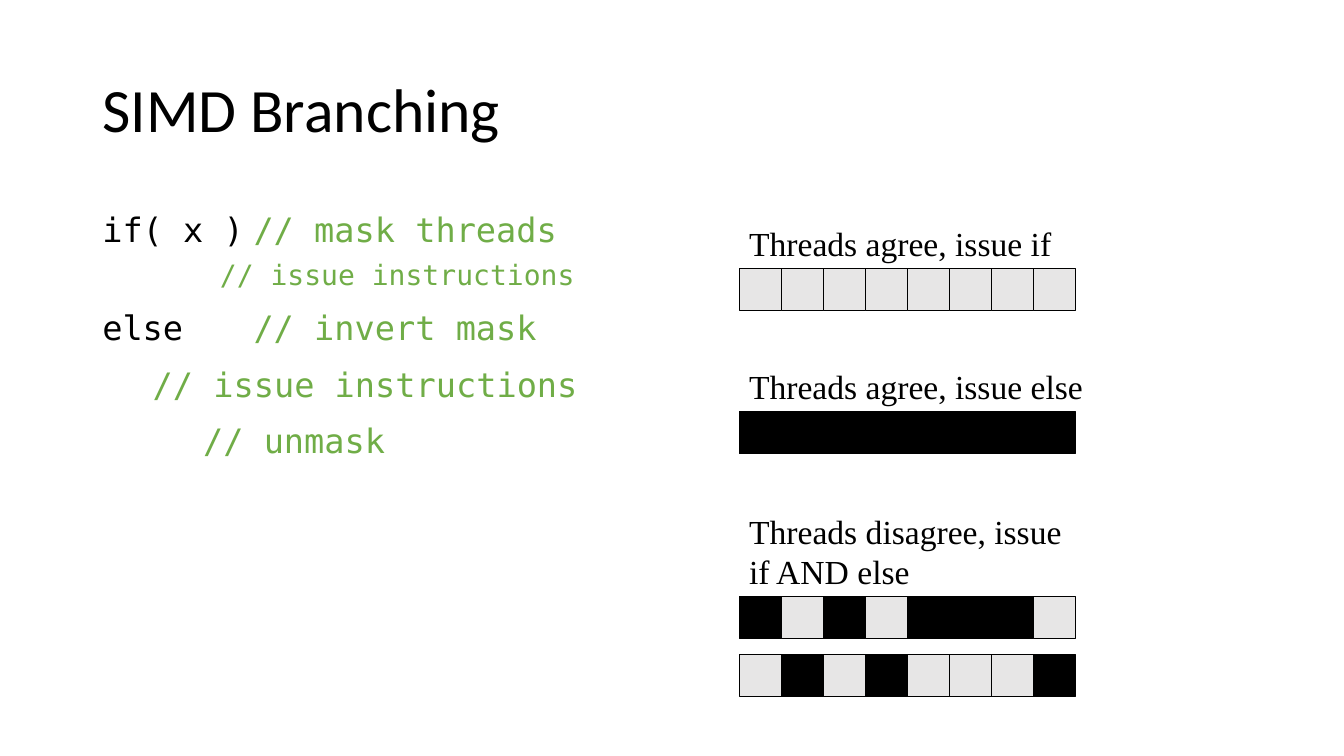
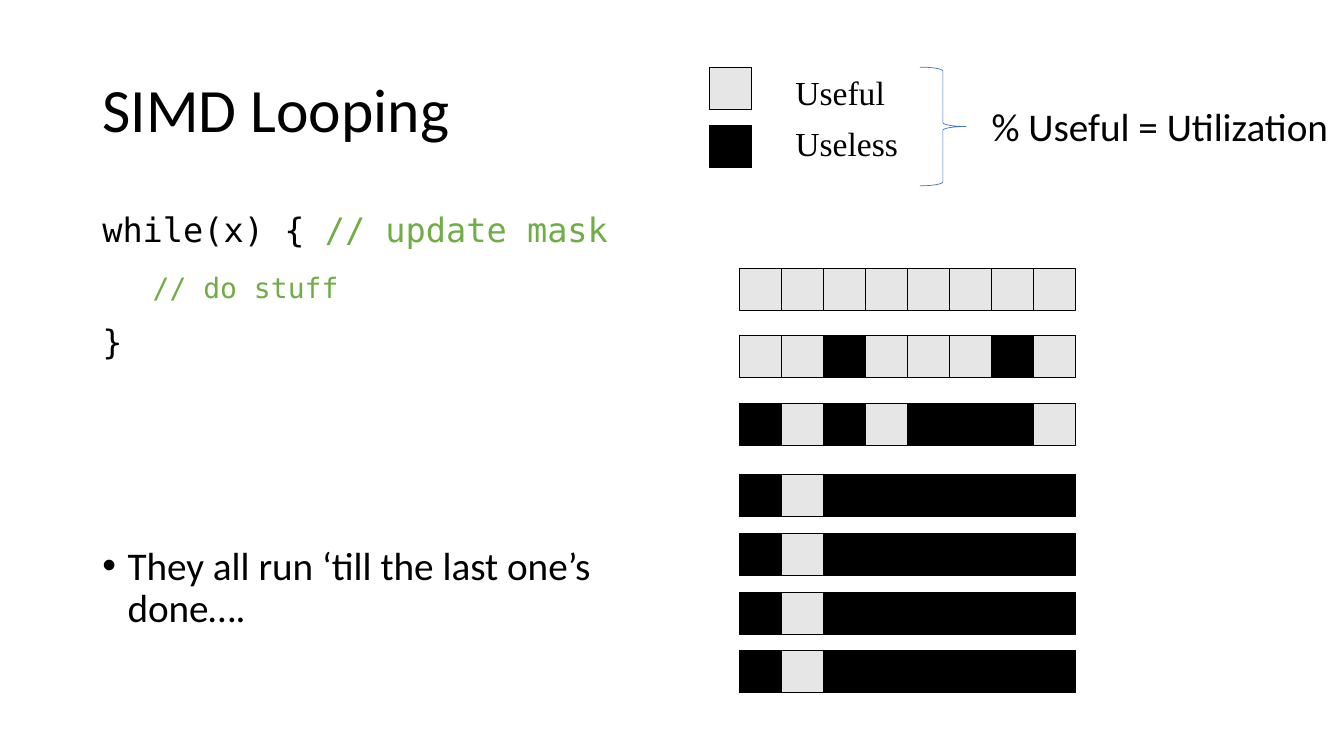
from dataclasses import dataclass

from lxml import etree
from pptx import Presentation
from pptx import util as u
from pptx.dml.color import RGBColor
from pptx.enum import shapes, text
from pptx.oxml import ns

PX = 9525
CELL = 40
ROW_LEFT = 704


@dataclass(frozen=True)
class Theme:
    """Colours, fonts and type sizes of the deck."""

    ink: str = "000000"
    comment: str = "70AD47"
    useful: str = "E7E6E6"
    useless: str = "000000"
    brace: str = "4472C4"
    sans: str = "Calibri"
    mono: str = "DejaVu Sans Mono"
    serif: str = "Times New Roman"
    title: int = 44
    body: int = 28
    code: int = 24
    code_small: int = 20
    label: int = 24


class Deck:
    """Draws styled elements on the current slide."""

    def __init__(self, theme):
        self.theme = theme
        self.presentation = Presentation()
        self.presentation.slide_width = 1280 * PX
        self.presentation.slide_height = 720 * PX
        self.slide = None

    def add_slide(self, title):
        """Start a blank slide with its title."""
        self.slide = self.presentation.slides.add_slide(self.presentation.slide_layouts[6])
        frame = self.text_frame(88, 38, 1104, 139)
        frame.vertical_anchor = text.MSO_ANCHOR.MIDDLE
        paragraph = frame.paragraphs[0]
        paragraph.line_spacing = 0.9
        self.run(paragraph, title, self.theme.sans, self.theme.title)

    def text_frame(self, left, top, width, height, wrap=True):
        """Add a text box and return its frame."""
        box = self.slide.shapes.add_textbox(left * PX, top * PX, width * PX, height * PX)
        box.text_frame.word_wrap = wrap
        return box.text_frame

    def run(self, paragraph, words, font, size, color=None):
        """Append a formatted run."""
        run = paragraph.add_run()
        run.text = words
        run.font.name = font
        run.font.size = u.Pt(size)
        run.font.color.rgb = RGBColor.from_string(color or self.theme.ink)

    def code(self, lines):
        """Write rows of (code, comment, comment size, left margin, space before)."""
        frame = self.text_frame(88, 192, 544, 457)
        for index, (words, comment, size, margin, before) in enumerate(lines):
            paragraph = frame.paragraphs[0] if index == 0 else frame.add_paragraph()
            paragraph.space_before = u.Pt(before)
            paragraph.line_spacing = 1.05
            paragraph._p.get_or_add_pPr().set("marL", str(margin * PX))
            if words:
                self.run(paragraph, words, self.theme.mono, self.theme.code)
            if comment:
                self.run(paragraph, comment, self.theme.mono, size, self.theme.comment)
        return frame

    def bullet(self, frame, words, before):
        """Append a bulleted paragraph."""
        paragraph = frame.add_paragraph()
        paragraph.space_before = u.Pt(before)
        paragraph.line_spacing = 0.9
        properties = paragraph._p.get_or_add_pPr()
        properties.set("marL", str(24 * PX))
        properties.set("indent", str(-24 * PX))
        etree.SubElement(properties, ns.qn("a:buFont")).set("typeface", "Arial")
        etree.SubElement(properties, ns.qn("a:buChar")).set("char", "•")
        self.run(paragraph, words, self.theme.sans, self.theme.body)

    def label(self, words, left, top, width, height=48):
        """Write a serif caption."""
        frame = self.text_frame(left, top, width, height)
        self.run(frame.paragraphs[0], words, self.theme.serif, self.theme.label)

    def note(self, words, left, top, width, height):
        """Write a sans line that does not wrap."""
        frame = self.text_frame(left, top, width, height, wrap=False)
        self.run(frame.paragraphs[0], words, self.theme.sans, self.theme.body)

    def cell(self, left, top, useful, parent=None):
        """Draw one thread square."""
        parent = parent or self.slide
        shape = parent.shapes.add_shape(
            shapes.MSO_SHAPE.RECTANGLE, left * PX, top * PX, CELL * PX, CELL * PX)
        shape.shadow.inherit = False
        shape.fill.solid()
        color = self.theme.useful if useful else self.theme.useless
        shape.fill.fore_color.rgb = RGBColor.from_string(color)
        shape.line.color.rgb = RGBColor.from_string(self.theme.ink)
        shape.line.width = u.Pt(0.75)

    def thread_row(self, top, mask):
        """Draw a group of threads, 1 for useful and 0 for useless."""
        group = self.slide.shapes.add_group_shape()
        for index, bit in enumerate(mask):
            self.cell(ROW_LEFT + index * CELL, top, bit == "1", group)

    def brace(self, left, top, width, height):
        """Draw a right brace."""
        shape = self.slide.shapes.add_shape(
            shapes.MSO_SHAPE.RIGHT_BRACE, left * PX, top * PX, width * PX, height * PX)
        shape.shadow.inherit = False
        shape.fill.background()
        shape.line.color.rgb = RGBColor.from_string(self.theme.brace)
        shape.line.width = u.Pt(0.5)


def branching(deck):
    """Build the branching slide."""
    large, small = deck.theme.code, deck.theme.code_small
    deck.add_slide("SIMD Branching")
    deck.code([
        ("if( x )\t", "// mask threads", large, 0, 10),
        ("", "// issue instructions", small, 112, 5),
        ("else\t\t", "// invert mask", large, 0, 10),
        ("\t", "// issue instructions", large, 0, 10),
        ("\t\t", "// unmask", large, 0, 10),
    ])
    deck.label("Threads agree, issue if", ROW_LEFT, 208, 320)
    deck.label("Threads agree, issue else", ROW_LEFT, 344, 376)
    deck.label("Threads disagree, issue if AND else", ROW_LEFT, 482, 320, 87)
    for top, mask in [(256, "11111111"), (392, "00000000"),
                      (568, "01010001"), (623, "10101110")]:
        deck.thread_row(top, mask)


def looping(deck):
    """Build the looping slide."""
    large, small = deck.theme.code, deck.theme.code_small
    deck.add_slide("SIMD Looping")
    frame = deck.code([
        ("while(x) { ", "// update mask", large, 0, 10),
        ("\t", "// do stuff", small, 0, 10),
        ("}", "", large, 0, 10),
    ])
    deck.bullet(frame, "They all run ‘till the last one’s done….", 132)
    for top, mask in [(256, "11111111"), (320, "11011101"), (384, "01010001")]:
        deck.thread_row(top, mask)
    for index in range(4):
        deck.thread_row(452 + index * 56, "01000000")
    for index, words in enumerate(["Useful", "Useless"]):
        deck.cell(676, 64 + index * 56, words == "Useful")
        deck.label(words, 748, 64 + index * 48, 120)
    deck.brace(876, 64, 44, 113)
    deck.note("% Useful = Utilization", 935, 93, 344, 55)


def main():
    """Build and save the deck."""
    deck = Deck(Theme())
    branching(deck)
    looping(deck)
    deck.presentation.save("out.pptx")


if __name__ == "__main__":
    main()
